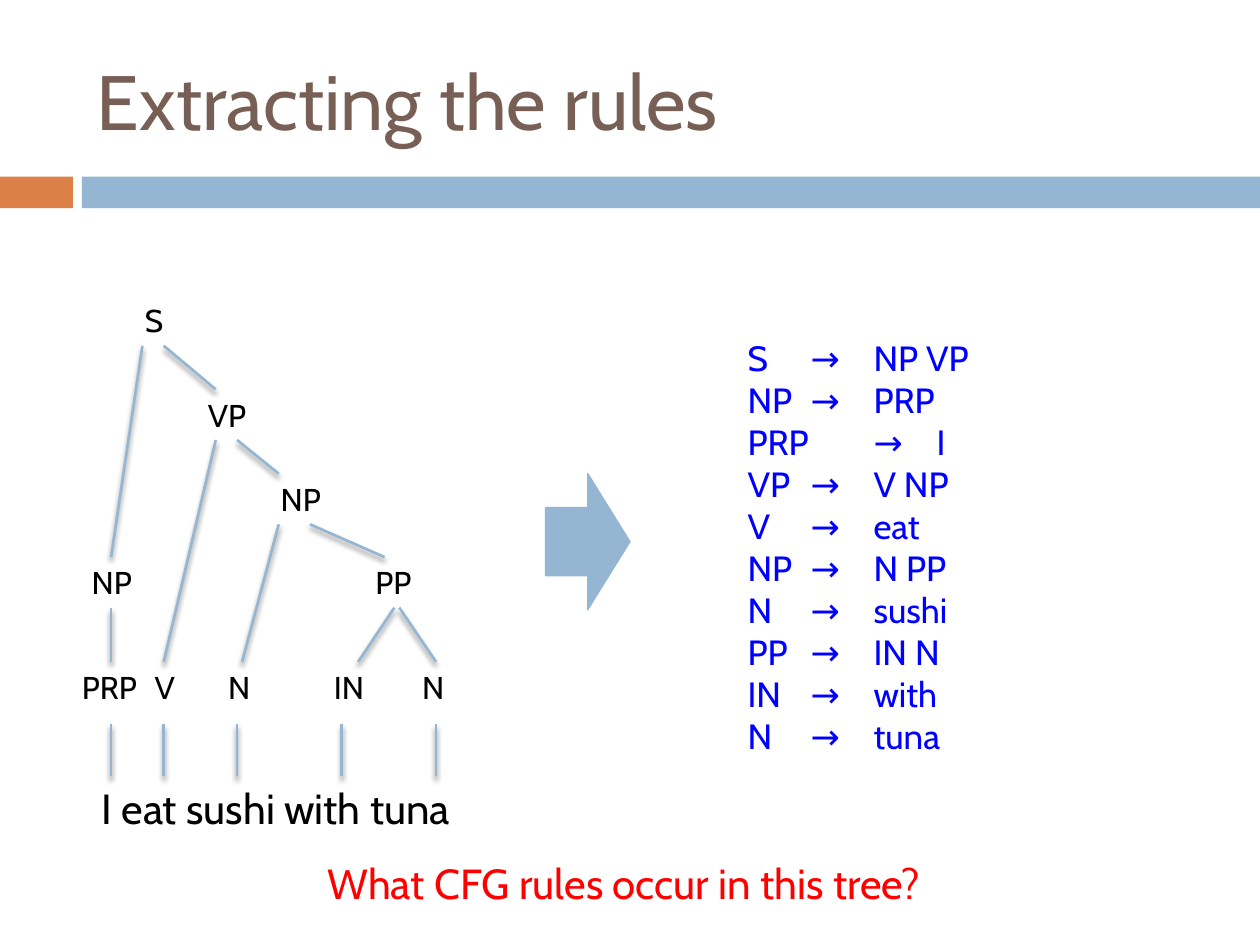
from dataclasses import dataclass

from lxml.etree import SubElement
from pptx import Presentation
from pptx.dml.color import RGBColor
from pptx.enum.shapes import MSO_CONNECTOR as Connector, MSO_SHAPE as Shape
from pptx.enum.text import MSO_ANCHOR as Anchor, MSO_AUTO_SIZE as AutoSize, PP_ALIGN as Align
from pptx.oxml import parse_xml
from pptx.oxml.ns import nsdecls, qn
from pptx.util import Cm, Pt


@dataclass(frozen=True)
class Theme:
    font: str = "Cabin"
    symbol_font: str = "Noto Sans"
    title: str = "775F55"
    accent: str = "DD8047"
    main: str = "94B6D2"
    text: str = "000000"
    rule: str = "0000FF"
    question: str = "FF0000"
    title_size: float = 44
    large_size: float = 24
    rule_size: float = 20
    node_size: float = 18
    line_width: float = 1.5
    outline_width: float = 0.79


@dataclass(frozen=True)
class Box:
    left: float
    top: float
    width: float
    height: float

    def inner(self, left, top, width, height):
        return Box(self.left + left, self.top + top, width, height)

    def lengths(self):
        return [Cm(value) for value in (self.left, self.top, self.width, self.height)]


THEME = Theme()
NODE_HEIGHT = 1.02
LEVELS = (0, 1.9, 3.6, 5.28, 7.39)
WORD_LINE_TOP, SENTENCE_TOP = 8.64, 9.7

NODES = [
    ("S", 1.27, 0, 1.7),
    ("VP", 2.54, 1, 1.7),
    ("NP", 4.01, 2, 1.7),
    ("NP", 0.2, 3, 2.74),
    ("PP", 5.92, 3, 1.9),
    ("PRP", 0, 4, 2.34),
    ("V", 1.47, 4, 2.74),
    ("N", 2.95, 4, 1.07),
    ("IN", 5.08, 4, 1.47),
    ("N", 6.86, 4, 1.47),
]
BRANCHES = [
    (1.47, 0, 0.84, 3),
    (1.9, 0, 2.95, 1),
    (2.95, 1, 1.9, 4),
    (3.38, 1, 4.22, 2),
    (4.22, 2, 3.48, 4),
    (4.85, 2, 6.35, 3),
    (0.84, 3, 0.84, 4),
    (6.55, 3, 5.82, 4),
    (6.65, 3, 7.39, 4),
]
WORD_LINES = (0.84, 1.9, 3.38, 5.49, 7.39)

RULES = [
    ("S", "NP VP"),
    ("NP", "PRP"),
    ("PRP", "I"),
    ("VP", "V NP"),
    ("V", "eat"),
    ("NP", "N PP"),
    ("N", "sushi"),
    ("PP", "IN N"),
    ("IN", "with"),
    ("N", "tuna"),
]


def add_run(paragraph, text, size, color, font=THEME.font):
    run = paragraph.add_run()
    run.text = text
    run.font.size = Pt(size)
    run.font.name = font
    run.font.color.rgb = RGBColor.from_string(color)


def add_text_box(slide, box):
    frame = slide.shapes.add_textbox(*box.lengths()).text_frame
    frame.word_wrap = True
    frame.auto_size = AutoSize.SHAPE_TO_FIT_TEXT
    return frame


def add_label(slide, box, text, size, color=THEME.text):
    add_run(add_text_box(slide, box).paragraphs[0], text, size, color)


def add_block(slide, kind, box, color):
    shape = slide.shapes.add_shape(kind, *box.lengths())
    shape.shadow.inherit = False
    shape.fill.solid()
    shape.fill.fore_color.rgb = RGBColor.from_string(color)
    shape.line.fill.background()
    return shape


def add_branch(slide, box, start_x, start_y, end_x, end_y):
    line = slide.shapes.add_connector(
        Connector.STRAIGHT,
        Cm(box.left + start_x), Cm(box.top + start_y),
        Cm(box.left + end_x), Cm(box.top + end_y),
    )
    line.line.color.rgb = RGBColor.from_string(THEME.main)
    line.line.width = Pt(THEME.line_width)
    line._element.spPr.append(parse_xml(
        f'<a:effectLst {nsdecls("a")}>'
        f'<a:outerShdw blurRad="{Pt(3)}" dist="{Pt(2.4)}" dir="5400000" rotWithShape="0">'
        '<a:srgbClr val="000000"><a:alpha val="45000"/></a:srgbClr>'
        '</a:outerShdw></a:effectLst>'
    ))


def add_header(slide, box):
    bar_top, bar_height, accent_width, bar_left = 3.56, 0.64, 1.47, 1.65
    add_block(slide, Shape.RECTANGLE,
              box.inner(0, bar_top, accent_width, bar_height), THEME.accent)
    add_block(slide, Shape.RECTANGLE,
              box.inner(bar_left, bar_top, box.width - bar_left, bar_height), THEME.main)
    title = slide.shapes.title
    title.left, title.top, title.width, title.height = box.inner(1.7, 0.64, 22.65, 2.74).lengths()
    title.text_frame.vertical_anchor = Anchor.MIDDLE
    paragraph = title.text_frame.paragraphs[0]
    paragraph.alignment = Align.LEFT
    add_run(paragraph, "Extracting the rules", THEME.title_size, THEME.title)


def add_tree(slide, box):
    for start_x, parent, end_x, child in BRANCHES:
        add_branch(slide, box, start_x, LEVELS[parent] + NODE_HEIGHT, end_x, LEVELS[child])
    for x in WORD_LINES:
        add_branch(slide, box, x, WORD_LINE_TOP, x, SENTENCE_TOP)
    for label, left, level, width in NODES:
        add_label(slide, box.inner(left, LEVELS[level], width, NODE_HEIGHT),
                  label, THEME.node_size)
    add_label(slide, box.inner(0.4, SENTENCE_TOP, 10.36, 1.27),
              "I eat sushi with tuna", THEME.large_size)


def add_arrow(slide, box):
    arrow = add_block(slide, Shape.RIGHT_ARROW, box, THEME.main)
    arrow.line.color.rgb = RGBColor.from_string(THEME.main)
    arrow.line.width = Pt(THEME.outline_width)


def add_rules(slide, box):
    frame = add_text_box(slide, box)
    for index, (left_side, right_side) in enumerate(RULES):
        paragraph = frame.add_paragraph() if index else frame.paragraphs[0]
        tabs = SubElement(paragraph._p.get_or_add_pPr(), qn("a:tabLst"))
        for stop in (1, 2, 3):
            SubElement(tabs, qn("a:tab"), pos=str(Cm(1.27 * stop)), algn="l")
        add_run(paragraph, f"{left_side} \t", THEME.rule_size, THEME.rule)
        add_run(paragraph, "→", THEME.rule_size, THEME.rule, THEME.symbol_font)
        add_run(paragraph, f" \t{right_side}", THEME.rule_size, THEME.rule)


def main():
    presentation = Presentation()
    presentation.slide_width, presentation.slide_height = Cm(25.4), Cm(19.05)
    slide = presentation.slides.add_slide(presentation.slide_layouts.get_by_name("Title Only"))
    add_header(slide, Box(0, 0, 25.4, 4.2))
    add_tree(slide, Box(1.4, 5.95, 10.76, 10.97))
    add_arrow(slide, Box(11, 9.55, 1.7, 2.74))
    add_rules(slide, Box(14.82, 6.65, 7.42, 8.81))
    add_label(slide, Box(6.35, 17.17, 13.23, 1.27),
              "What CFG rules occur in this tree?", THEME.large_size, THEME.question)
    presentation.save("out.pptx")


if __name__ == "__main__":
    main()
